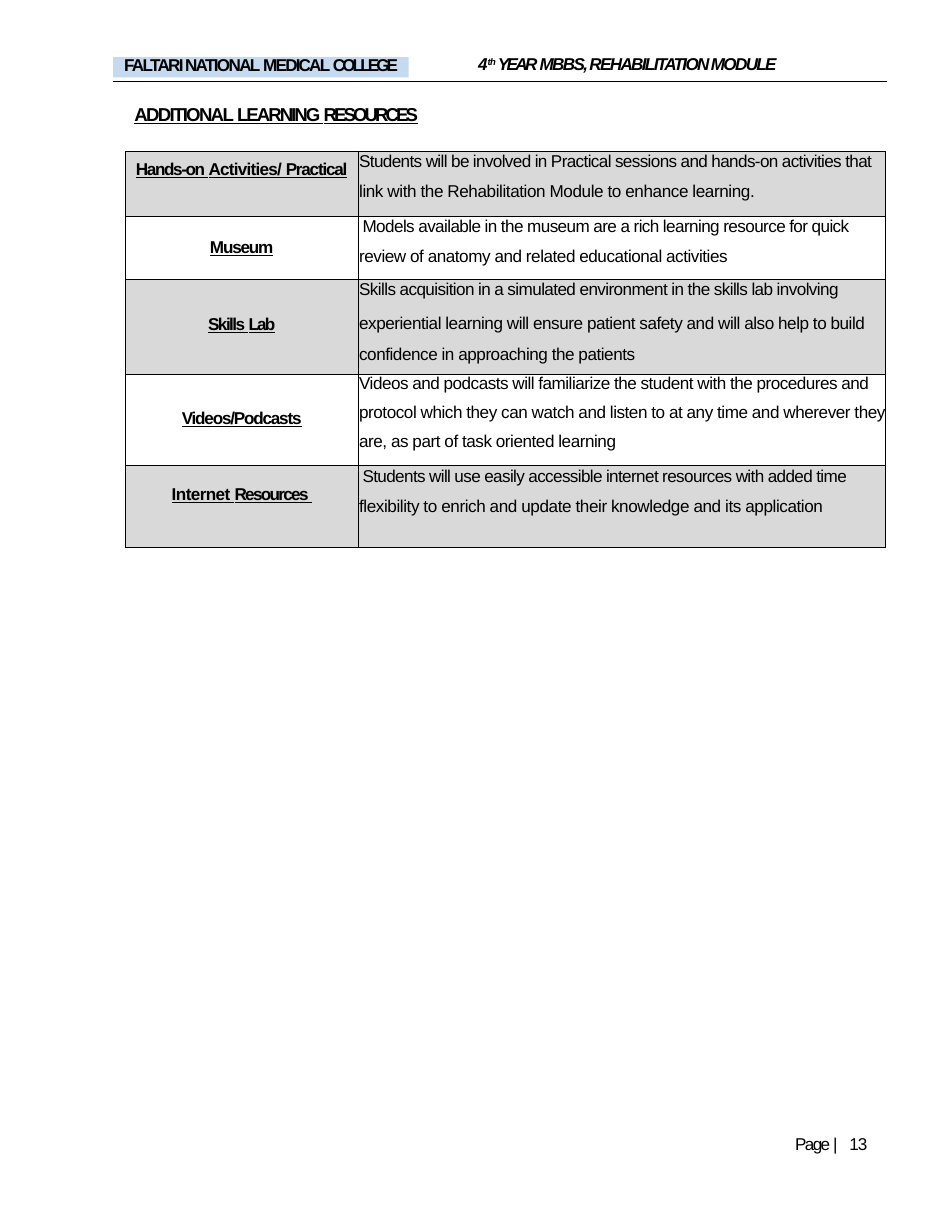
from dataclasses import dataclass
from typing import NamedTuple

from lxml import etree
from pptx import Presentation
from pptx.dml.color import RGBColor
from pptx.enum import shapes, text
from pptx.oxml import ns
from pptx.util import Pt

BLACK = RGBColor(0x00, 0x00, 0x00)
WHITE = RGBColor(0xFF, 0xFF, 0xFF)
GREY = RGBColor(0xD9, 0xD9, 0xD9)
BLUE = RGBColor(0xC5, 0xD9, 0xEF)
FONT = "Arial"


class Span(NamedTuple):
    words: str
    tracking: float  # letter spacing in points
    raised: bool = False


class Line(NamedTuple):
    words: str
    tracking: float
    indent: float = 0.72
    spacing: float | Pt | None = None
    before: float = 0


@dataclass
class Resource:
    label: list[Span]
    drop: float  # space above the label
    height: float
    lines: list[Line]


RESOURCES = [
    Resource(
        [Span("Hands-on ", -0.9), Span("Activities/ ", -0.5), Span("Practical", -0.8)], 5.76, 41.8,
        [Line("Students will be involved in Practical sessions and hands-on activities that",
              -0.42, spacing=Pt(12.9)),
         Line("link with the Rehabilitation Module to enhance learning.", -0.28, before=7)]),
    Resource(
        [Span("Museum", -0.8)], 13.9, 40.3,
        [Line("Models available in the museum are a rich learning resource for quick",
              -0.4, indent=2.9, spacing=Pt(12.9)),
         Line("review of anatomy and related educational activities", -0.3, before=7)]),
    Resource(
        [Span("Skills ", -1), Span("Lab", -1.2)], 23.2, 61.2,
        [Line("Skills acquisition in a simulated environment in the skills lab involving",
              -0.4, spacing=Pt(13)),
         Line("experiential learning will ensure patient safety and will also help to "
              "build confidence in approaching the patients",
              -0.32, spacing=Pt(20.2), before=1.6)]),
    Resource(
        [Span("Videos/Podcasts", -0.8)], 22.5, 59,
        [Line("Videos and podcasts will familiarize the student with the procedures and", -0.35),
         Line("protocol which they can watch and listen to at any time and wherever "
              "they are, as part of task oriented learning", -0.3, spacing=1.53)]),
    Resource(
        [Span("Internet ", -0.4), Span("Resources ", -1.1)], 12.3, 52.6,
        [Line("Students will use easily accessible internet resources with added time",
              -0.42, indent=2.9, spacing=Pt(13)),
         Line("flexibility to enrich and update their knowledge and its application",
              -0.28, before=6.8)]),
]


def write(para, spans: list[Span], size: float = 11, bold: bool = False,
          italic: bool = False, underline: bool = False) -> None:
    font = para.font
    font.name, font.size = FONT, Pt(size)
    font.bold, font.italic, font.underline = bold, italic, underline
    font.color.rgb = BLACK
    for span in spans:
        run = para.add_run()
        run.text = span.words
        properties = run._r.get_or_add_rPr()
        properties.set("spc", str(round(span.tracking * 100)))
        if span.raised:
            run.font.size = Pt(10.5)
            properties.set("baseline", "32000")


def prepare(box, left: float = 0.72, top: float = 0):
    """Set the insets of a box and return its first paragraph."""
    frame = box.text_frame
    frame.word_wrap = True
    frame.auto_size = text.MSO_AUTO_SIZE.NONE
    frame.vertical_anchor = text.MSO_ANCHOR.TOP
    frame.margin_left, frame.margin_top = Pt(left), Pt(top)
    frame.margin_right = frame.margin_bottom = 0
    para = frame.paragraphs[0]
    para.alignment = text.PP_ALIGN.LEFT
    return para


def style_cell(cell, fill: RGBColor, top: float = 0) -> None:
    cell.fill.solid()
    cell.fill.fore_color.rgb = fill
    cell.margin_left = cell.margin_right = cell.margin_bottom = 0
    cell.margin_top = Pt(top)
    cell.vertical_anchor = text.MSO_ANCHOR.TOP
    properties = cell._tc.get_or_add_tcPr()
    for place, side in enumerate(("lnL", "lnR", "lnT", "lnB")):
        border = etree.Element(ns.qn(f"a:{side}"), w=str(Pt(0.5)))
        paint = etree.SubElement(border, ns.qn("a:solidFill"))
        etree.SubElement(paint, ns.qn("a:srgbClr"), val=str(BLACK))
        properties.insert(place, border)


def fill_row(table, index: int, resource: Resource) -> None:
    table.rows[index].height = Pt(resource.height)
    label, detail = table.cell(index, 0), table.cell(index, 1)
    fill = WHITE if index % 2 else GREY
    style_cell(label, fill, resource.drop)
    style_cell(detail, fill)
    para = label.text_frame.paragraphs[0]
    para.alignment = text.PP_ALIGN.CENTER
    write(para, resource.label, bold=True, underline=True)
    for number, line in enumerate(resource.lines):
        frame = detail.text_frame
        para = frame.add_paragraph() if number else frame.paragraphs[0]
        para._p.get_or_add_pPr().set("marL", str(Pt(line.indent)))
        para.space_before = Pt(line.before)
        if line.spacing:
            para.line_spacing = line.spacing
        write(para, [Span(line.words, line.tracking)])


def main() -> None:
    deck = Presentation()
    deck.slide_width, deck.slide_height = Pt(612), Pt(792)
    page = deck.slides.add_slide(deck.slide_layouts[5])

    # Header: rule, college name and module name
    rule = page.shapes.add_connector(
        shapes.MSO_CONNECTOR.STRAIGHT, Pt(72.7), Pt(52.6), Pt(570.2), Pt(52.6))
    rule.line.color.rgb = BLACK
    rule.line.width = Pt(0.75)
    etree.SubElement(rule._element.spPr, ns.qn("a:effectLst"))

    college = page.shapes.add_shape(
        shapes.MSO_SHAPE.RECTANGLE, Pt(72.7), Pt(36.7), Pt(190.1), Pt(13))
    college.shadow.inherit = False
    college.fill.solid()
    college.fill.fore_color.rgb = BLUE
    college.line.fill.background()
    para = prepare(college, left=7.2)
    para.line_spacing = Pt(11.6)
    write(para, [Span("FALTARI NATIONAL ", -1.1), Span("MEDICAL ", -1.2),
                 Span("COLLEGE", -1.9)], bold=True)

    module = page.shapes.add_textbox(Pt(306.7), Pt(33.8), Pt(254.2), Pt(14.4))
    write(prepare(module, top=0.72),
          [Span("4", -0.3), Span("th ", -0.5, raised=True), Span("YEAR ", -1.7),
           Span("MBBS, REHABILITATION MODULE", -1.1)], bold=True, italic=True)

    # Title
    title = page.shapes.title
    title.left, title.top, title.width, title.height = Pt(85.7), Pt(65.5), Pt(190), Pt(16.6)
    write(prepare(title, top=0.72),
          [Span("ADDITIONAL ", -1.1), Span("LEARNING ", -1.3), Span("RESOURCES", -1.9)],
          size=12, bold=True, underline=True)

    # Table of resources
    height = sum(resource.height for resource in RESOURCES)
    table = page.shapes.add_table(
        len(RESOURCES), 2, Pt(80.6), Pt(97.2), Pt(488.6), Pt(height)).table
    table.first_row = table.horz_banding = False
    table.columns[0].width, table.columns[1].width = Pt(149.6), Pt(339)
    for index, resource in enumerate(RESOURCES):
        fill_row(table, index, resource)

    # Page number
    number = page.shapes.add_textbox(Pt(510.5), Pt(730.1), Pt(48), Pt(13))
    para = prepare(number)
    para.line_spacing = Pt(11.5)
    write(para, [Span("Page ", -1.1), Span("| ", 2.2), Span("13", -0.6)])

    deck.save("out.pptx")


if __name__ == "__main__":
    main()
